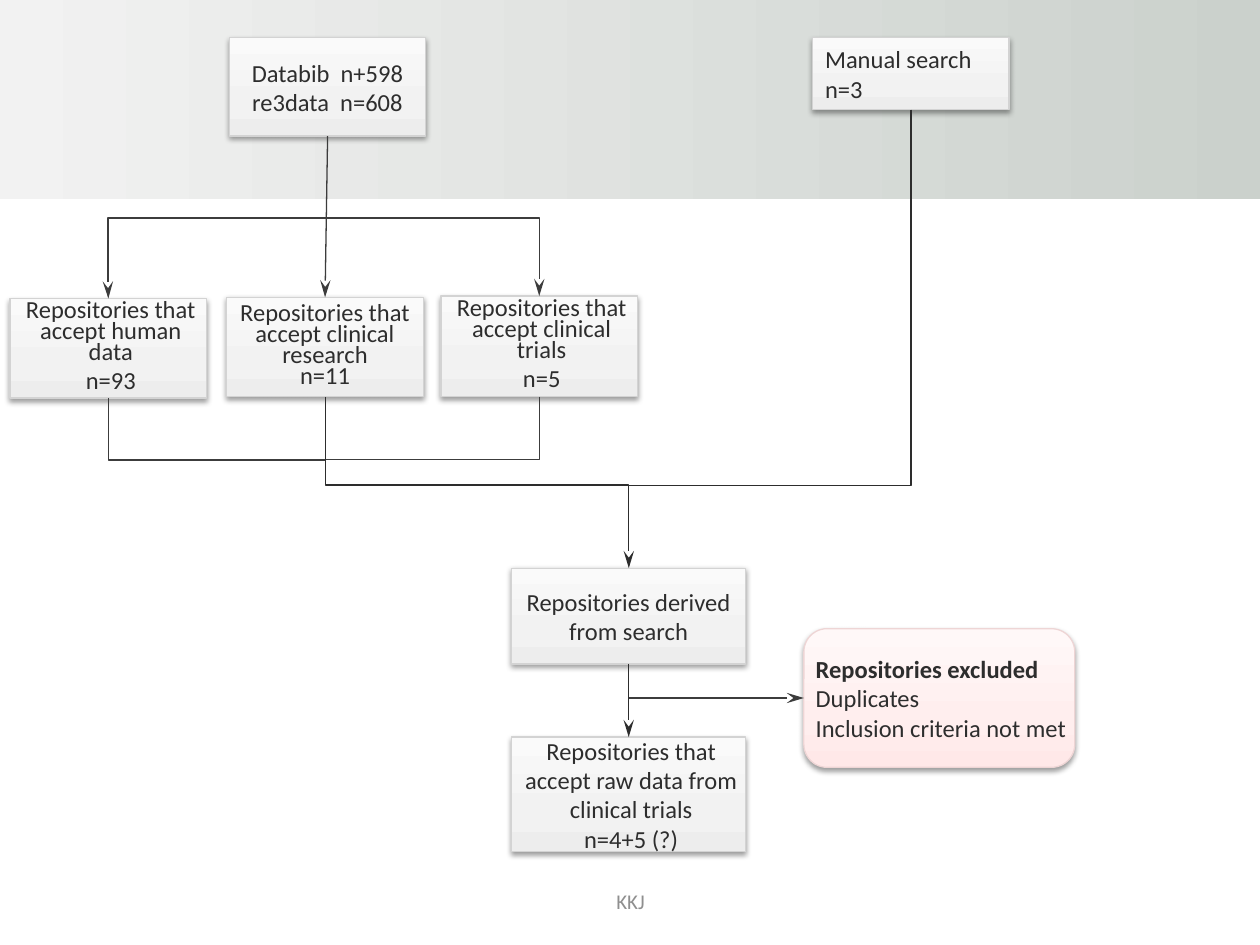
"""Build a flow chart slide of a search for clinical data repositories."""
from copy import deepcopy
from dataclasses import dataclass
from typing import Optional

from lxml import etree
from pptx import Presentation
from pptx.dml.color import RGBColor
from pptx.enum.shapes import MSO_CONNECTOR, MSO_SHAPE
from pptx.enum.text import MSO_ANCHOR, PP_ALIGN
from pptx.oxml.ns import qn
from pptx.util import Pt

RECTANGLE = MSO_SHAPE.RECTANGLE
ROUNDED = MSO_SHAPE.ROUNDED_RECTANGLE
STRAIGHT, ELBOW = MSO_CONNECTOR.STRAIGHT, MSO_CONNECTOR.ELBOW
LEFT, CENTER = PP_ALIGN.LEFT, PP_ALIGN.CENTER
MIDDLE = MSO_ANCHOR.MIDDLE

EMU_PER_PX = 9144
FONT = "Calibri"
TEXT_COLOR = "2D2D2D"
LINE_COLOR = "3C3C3C"
GREY_STOPS = ((0, "EDEDED"), (35, "F2F2F2"), (100, "FAFAFA"))
PINK_STOPS = ((0, "FFE8E8"), (35, "FFEEEE"), (100, "FFF8F8"))
BAND_STOPS = ((0, "F2F2F2"), (100, "CBD1CC"))


@dataclass(frozen=True)
class Box:
    key: str
    left: int
    top: int
    width: int
    height: int
    lines: tuple[str, ...]
    insets: tuple[int, int] = (10, 10)
    tight_lines: int = 0
    align: PP_ALIGN = CENTER
    kind: MSO_SHAPE = RECTANGLE
    stops: tuple = GREY_STOPS
    outline: str = "D3D3D3"
    bold_lines: int = 0


@dataclass(frozen=True)
class Link:
    start: tuple[int, int]
    end: tuple[int, int]
    color: str = LINE_COLOR
    arrow: bool = True
    begin_box: Optional[str] = None
    end_box: Optional[str] = None
    end_site: int = 0


@dataclass(frozen=True)
class Bend:
    start: tuple[int, int]
    end: tuple[int, int]
    vertical_first: bool
    turn: Optional[int] = None
    color: str = LINE_COLOR
    arrow: bool = False


BOXES = (
    Box("databases", 182, 30, 156, 78, ("Databib  n+598", "re3data  n=608")),
    Box("manual", 645, 30, 156, 57, ("Manual search n=3",), align=LEFT),
    Box("human", 8, 237, 156, 79,
        ("Repositories that accept human data", "n=93"), (8, 4), 1),
    Box("research", 180, 236, 156, 79,
        ("Repositories that accept clinical research", "n=11"), (4, 4), 2),
    Box("trials", 350, 235, 156, 80,
        ("Repositories that accept clinical trials", "n=5"), (8, 4), 1),
    Box("excluded", 638, 499, 215, 110,
        ("Repositories excluded", "Duplicates", "Inclusion criteria not met"),
        (4, 0), align=LEFT, kind=ROUNDED, stops=PINK_STOPS,
        outline="EED5D5", bold_lines=1),
    Box("derived", 406, 451, 186, 76, ("Repositories derived from search",)),
    Box("raw data", 406, 585, 186, 91,
        ("Repositories that accept raw data from clinical trials", "n=4+5 (?)"),
        (8, 4)),
)
LINKS = (
    Link((260, 108), (258, 236), begin_box="databases", end_box="research"),
    Link((499, 554), (638, 554), end_box="excluded", end_site=1),
    Link((499, 527), (499, 585), TEXT_COLOR, begin_box="derived", end_box="raw data"),
)
BENDS = (
    Bend((278, 173), (86, 237), False, turn=100200, arrow=True),
    Bend((253, 173), (428, 235), False, arrow=True),
    Bend((86, 316), (259, 365), True),
    Bend((428, 315), (258, 365), True),
    Bend((258, 315), (499, 451), True, 51400, TEXT_COLOR, True),
    Bend((723, 87), (499, 388), True, 99100, TEXT_COLOR),
)


def px(value: float) -> int:
    """Turn px into EMU."""
    return round(value * EMU_PER_PX)


def rgb(value: str) -> RGBColor:
    """Turn a hex string into a colour."""
    return RGBColor.from_string(value)


def fill_gradient(shape, stops: tuple, angle: int) -> None:
    """Fill a shape with a linear gradient."""
    shape.fill.gradient()
    shape.fill.gradient_angle = angle
    stop_list = shape.element.spPr.find(".//" + qn("a:gsLst"))
    for _ in stops[2:]:
        stop_list.append(deepcopy(stop_list[-1]))
    for stop, (percent, color) in zip(shape.fill.gradient_stops, stops):
        stop.position = percent / 100
        stop.color.rgb = rgb(color)


def add_shadow(shape) -> None:
    """Give a shape a soft shadow below it."""
    shape.shadow.inherit = False
    effects = shape.element.spPr.find(qn("a:effectLst"))
    shadow = etree.SubElement(effects, qn("a:outerShdw"), blurRad="40000",
                              dist="20000", dir="5400000", rotWithShape="0")
    color = etree.SubElement(shadow, qn("a:srgbClr"), val="000000")
    etree.SubElement(color, qn("a:alpha"), val="38000")


def style_paragraph(paragraph, align: PP_ALIGN, size: int, color: str) -> None:
    """Set the alignment and font of a paragraph."""
    paragraph.alignment = align
    paragraph.font.name = FONT
    paragraph.font.size = Pt(size)
    paragraph.font.color.rgb = rgb(color)


def add_box(slide, box: Box):
    """Draw one box of the flow chart."""
    shape = slide.shapes.add_shape(
        box.kind, px(box.left), px(box.top), px(box.width), px(box.height))
    fill_gradient(shape, box.stops, 90)
    shape.line.color.rgb = rgb(box.outline)
    shape.line.width = Pt(0.75)
    add_shadow(shape)
    frame = shape.text_frame
    frame.word_wrap = True
    frame.vertical_anchor = MIDDLE
    frame.margin_left, frame.margin_right = map(px, box.insets)
    frame.text = "\n".join(box.lines)
    for index, paragraph in enumerate(frame.paragraphs):
        style_paragraph(paragraph, box.align, 14, TEXT_COLOR)
        paragraph.font.bold = index < box.bold_lines
        if index < box.tight_lines:
            paragraph.line_spacing = Pt(12)
    return shape


def add_line(slide, kind: MSO_CONNECTOR, line: Link | Bend):
    """Draw a connector with its colour and arrowhead."""
    connector = slide.shapes.add_connector(kind, *map(px, line.start + line.end))
    connector.line.color.rgb = rgb(line.color)
    connector.line.width = Pt(0.75)
    properties = connector.element.spPr
    if line.arrow:
        etree.SubElement(properties.find(qn("a:ln")), qn("a:tailEnd"),
                         type="stealth", w="med", len="lg")
    etree.SubElement(properties, qn("a:effectLst"))
    return connector


def add_link(slide, link: Link, shapes: dict) -> None:
    """Draw a straight line and join it to its boxes."""
    connector = add_line(slide, STRAIGHT, link)
    if link.begin_box:
        connector.begin_connect(shapes[link.begin_box], 2)
    if link.end_box:
        connector.end_connect(shapes[link.end_box], link.end_site)


def add_bend(slide, bend: Bend) -> None:
    """Draw an elbow line, turned to leave its start the right way."""
    connector = add_line(slide, ELBOW, bend)
    (x1, y1), (x2, y2) = bend.start, bend.end
    rightward = x2 > x1
    width, height = abs(x2 - x1), abs(y2 - y1)
    if bend.vertical_first:
        width, height = height, width
    connector.left, connector.top = px((x1 + x2 - width) / 2), px((y1 + y2 - height) / 2)
    connector.width, connector.height = px(width), px(height)
    transform = connector.element.spPr.find(qn("a:xfrm"))
    if bend.vertical_first:
        transform.rot = 270 if rightward else 90
    else:
        transform.rot = 0 if rightward else 180
    transform.flipH = bend.vertical_first and rightward
    transform.flipV = not bend.vertical_first and not rightward
    geometry = connector.element.spPr.find(qn("a:prstGeom"))
    if bend.turn is None:
        geometry.set("prst", "bentConnector2")
    else:
        etree.SubElement(geometry.find(qn("a:avLst")), qn("a:gd"),
                         name="adj1", fmla=f"val {bend.turn}")


def main() -> None:
    """Build and save the slide."""
    presentation = Presentation()
    presentation.slide_width, presentation.slide_height = px(1000), px(750)
    slide = presentation.slides.add_slide(presentation.slide_layouts[6])
    band = slide.shapes.add_shape(RECTANGLE, 0, 0, px(1000), px(158))
    fill_gradient(band, BAND_STOPS, 0)
    band.line.fill.background()
    band.shadow.inherit = False
    footer = slide.shapes.add_textbox(px(342), px(695), px(317), px(40)).text_frame
    footer.word_wrap = True
    footer.vertical_anchor = MIDDLE
    footer.text = "KKJ"
    style_paragraph(footer.paragraphs[0], CENTER, 12, "8F8F8F")
    shapes = {box.key: add_box(slide, box) for box in BOXES}
    for link in LINKS:
        add_link(slide, link, shapes)
    for bend in BENDS:
        add_bend(slide, bend)
    presentation.save("out.pptx")


if __name__ == "__main__":
    main()
